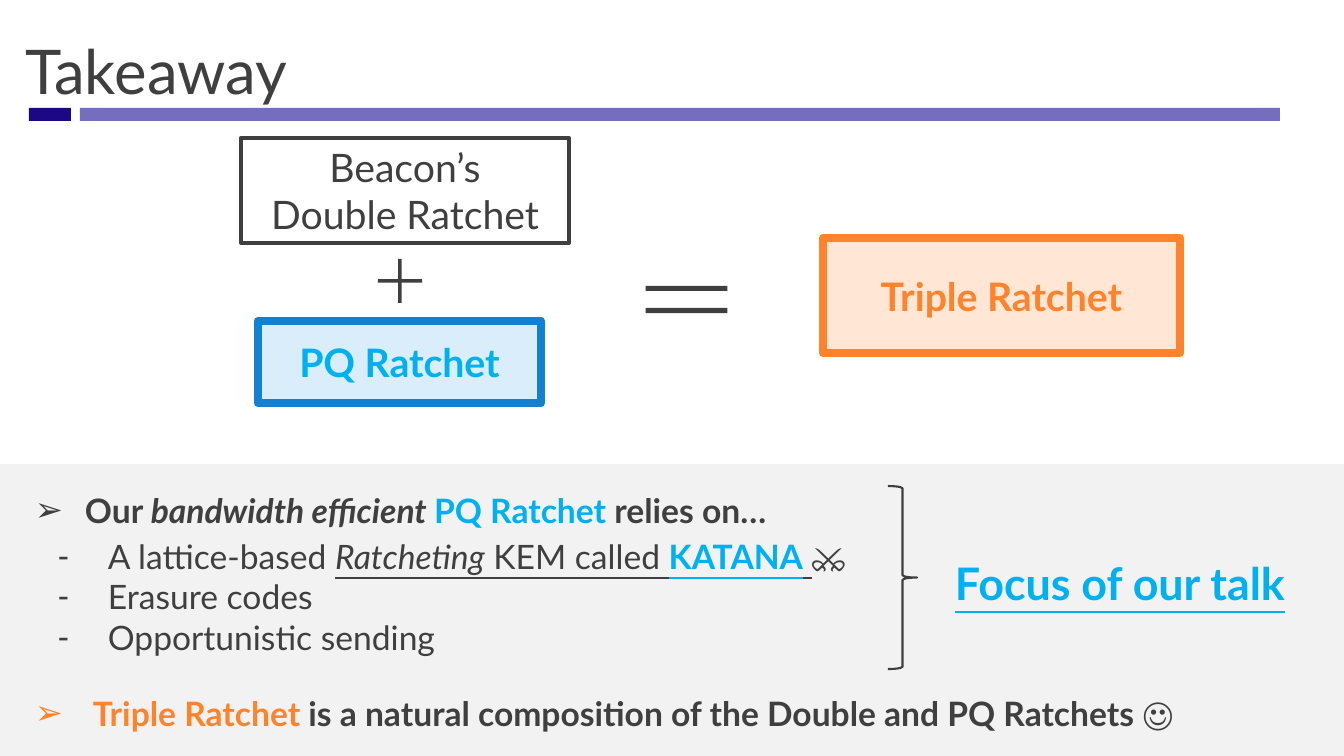
from lxml import etree
from pptx import Presentation
from pptx.dml.color import RGBColor
from pptx.enum.shapes import MSO_SHAPE
from pptx.enum.text import MSO_ANCHOR, MSO_AUTO_SIZE, PP_ALIGN
from pptx.oxml.ns import qn
from pptx.util import Pt

RECT, PLUS, EQUAL = MSO_SHAPE.RECTANGLE, MSO_SHAPE.CROSS, MSO_SHAPE.MATH_EQUAL
BRACE = MSO_SHAPE.LEFT_BRACE
TOP, MIDDLE = MSO_ANCHOR.TOP, MSO_ANCHOR.MIDDLE
LEFT, CENTER = PP_ALIGN.LEFT, PP_ALIGN.CENTER

PX = 914400 / 100.8
FONT = "Lato"
COLORS = {
    "ink": "3F3F3F", "navy": "1C0885", "violet": "665EB8", "panel": "F2F2F2",
    "sky": "00B0F0", "blue": "1480D1", "pale blue": "DAEDFB",
    "orange": "FF832B", "pale orange": "FFE6D5",
}

# Run formats
PLAIN, BOLD = {}, {"bold": True}
UNDERLINE = {"underline": True}
BOLD_UNDERLINE = {**BOLD, **UNDERLINE}

# Content: each paragraph is a list of (text, colour, format) runs
TITLE = [[("Takeaway", "ink", PLAIN)]]
HEADING = [[
    ("Our ", "ink", BOLD),
    ("bandwidth efficient ", "ink", {"bold": True, "italic": True}),
    ("PQ Ratchet ", "sky", BOLD),
    ("relies on…", "ink", BOLD),
]]
INGREDIENTS = [
    [
        ("A lattice-based ", "ink", PLAIN),
        ("Ratcheting", "ink", {"italic": True, "underline": True}),
        (" KEM called ", "ink", UNDERLINE),
        ("KATANA", "sky", BOLD_UNDERLINE),
        (" ", "ink", UNDERLINE),
        ("⚔️", "ink", PLAIN),
    ],
    [("Erasure codes", "ink", PLAIN)],
    [("Opportunistic sending", "ink", PLAIN)],
]
CLOSING = [[
    ("Triple Ratchet ", "orange", BOLD),
    ("is a natural composition of the Double and PQ Ratchets ☺", "ink", BOLD),
]]
FOCUS = [[("Focus of our talk", "sky", BOLD_UNDERLINE)]]

# Shapes: kind, (left, top, width, height) in px, fill, line, line points, adjustments
TITLE_BARS = [
    (RECT, (29, 108, 42, 13), "navy", None, 0, ()),
    (RECT, (80, 108, 1200, 13), "violet", None, 0, ()),
]
PANEL = (RECT, (0, 465, 1344, 291), "panel", "panel", 1, ())
SYMBOLS = [
    (PLUS, (378, 259, 44, 44), "ink", None, 0, (0.46,)),
    (EQUAL, (631, 257, 111, 85), "ink", None, 0, (0.06, 0.2)),
]
FOCUS_BRACE = (BRACE, (888, 486, 29, 183), None, "ink", 1.5, (0.08, 0.5))
BOXES = [
    ((RECT, (241, 138, 328, 105), None, "ink", 3, ()),
     [[("Beacon’s", "ink", PLAIN)], [("Double Ratchet", "ink", PLAIN)]]),
    ((RECT, (258, 321, 283, 82), "pale blue", "blue", 6, ()),
     [[("PQ Ratchet", "sky", BOLD)]]),
    ((RECT, (823, 238, 357, 115), "pale orange", "orange", 6, ()),
     [[("Triple Ratchet", "orange", BOLD)]]),
]

# Text blocks: place, paragraphs, size, bullet, line spacing, hanging indent in px
TEXT_BLOCKS = [
    ((25, 465, 1108, 64), HEADING, 24, "➢", 1.5, 50),
    ((48, 531, 865, 132), INGREDIENTS, 24, "-", 1, 50),
    ((25, 668, 1266, 64), CLOSING, 24, "➢", 1.5, 58),
    ((945, 551, 388, 65), FOCUS, 32, None, 1, 0),
]


def px(length):
    return round(length * PX)


def color(name):
    return RGBColor.from_string(COLORS[name])


def add_bullet(paragraph, character, indent):
    properties = paragraph._p.get_or_add_pPr()
    properties.set("marL", str(px(indent)))
    properties.set("indent", str(-px(indent)))
    etree.SubElement(properties, qn("a:buFont")).set("typeface", "Arial")
    etree.SubElement(properties, qn("a:buChar")).set("char", character)


def write_text(shape, paragraphs, size, alignment=LEFT, anchor=MIDDLE,
               bullet=None, spacing=1, indent=0):
    frame = shape.text_frame
    frame.word_wrap = True
    frame.auto_size = MSO_AUTO_SIZE.NONE
    frame.vertical_anchor = anchor
    for index, runs in enumerate(paragraphs):
        paragraph = frame.add_paragraph() if index else frame.paragraphs[0]
        paragraph.alignment = alignment
        paragraph.line_spacing = spacing
        if bullet:
            add_bullet(paragraph, bullet, indent)
        for text, color_name, run_format in runs:
            run = paragraph.add_run()
            run.text = text
            run.font.color.rgb = color(color_name)
            for name, value in {"name": FONT, "size": Pt(size), **run_format}.items():
                setattr(run.font, name, value)


def add_shape(slide, kind, place, fill, line, points, adjustments):
    shape = slide.shapes.add_shape(kind, *map(px, place))
    shape.shadow.inherit = False
    for index, value in enumerate(adjustments):
        shape.adjustments[index] = value
    if fill:
        shape.fill.solid()
        shape.fill.fore_color.rgb = color(fill)
    else:
        shape.fill.background()
    if line:
        shape.line.color.rgb = color(line)
        shape.line.width = Pt(points)
    else:
        shape.line.fill.background()
    return shape


def main():
    presentation = Presentation()
    presentation.slide_width, presentation.slide_height = px(1344), px(756)
    slide = presentation.slides.add_slide(presentation.slide_layouts[5])

    # Title and its bars
    title = slide.shapes.title
    title.left, title.top, title.width, title.height = map(px, (25, 34, 1266, 72))
    for side in ("left", "top", "right", "bottom"):
        setattr(title.text_frame, f"margin_{side}", 0)
    write_text(title, TITLE, 44)
    bars = [add_shape(slide, *bar) for bar in TITLE_BARS]
    violet = bars[1].fill._xPr.find(".//" + qn("a:srgbClr"))
    etree.SubElement(violet, qn("a:alpha")).set("val", "90000")

    # Ratchet equation
    for box, label in BOXES:
        write_text(add_shape(slide, *box), label, 28, CENTER)
    for symbol in SYMBOLS:
        add_shape(slide, *symbol)

    # Lower panel with the points and the brace
    add_shape(slide, *PANEL)
    for place, paragraphs, size, bullet, spacing, indent in TEXT_BLOCKS:
        text_box = slide.shapes.add_textbox(*map(px, place))
        write_text(text_box, paragraphs, size, LEFT, TOP, bullet, spacing, indent)
    add_shape(slide, *FOCUS_BRACE).rotation = 180

    presentation.save("out.pptx")


if __name__ == "__main__":
    main()
